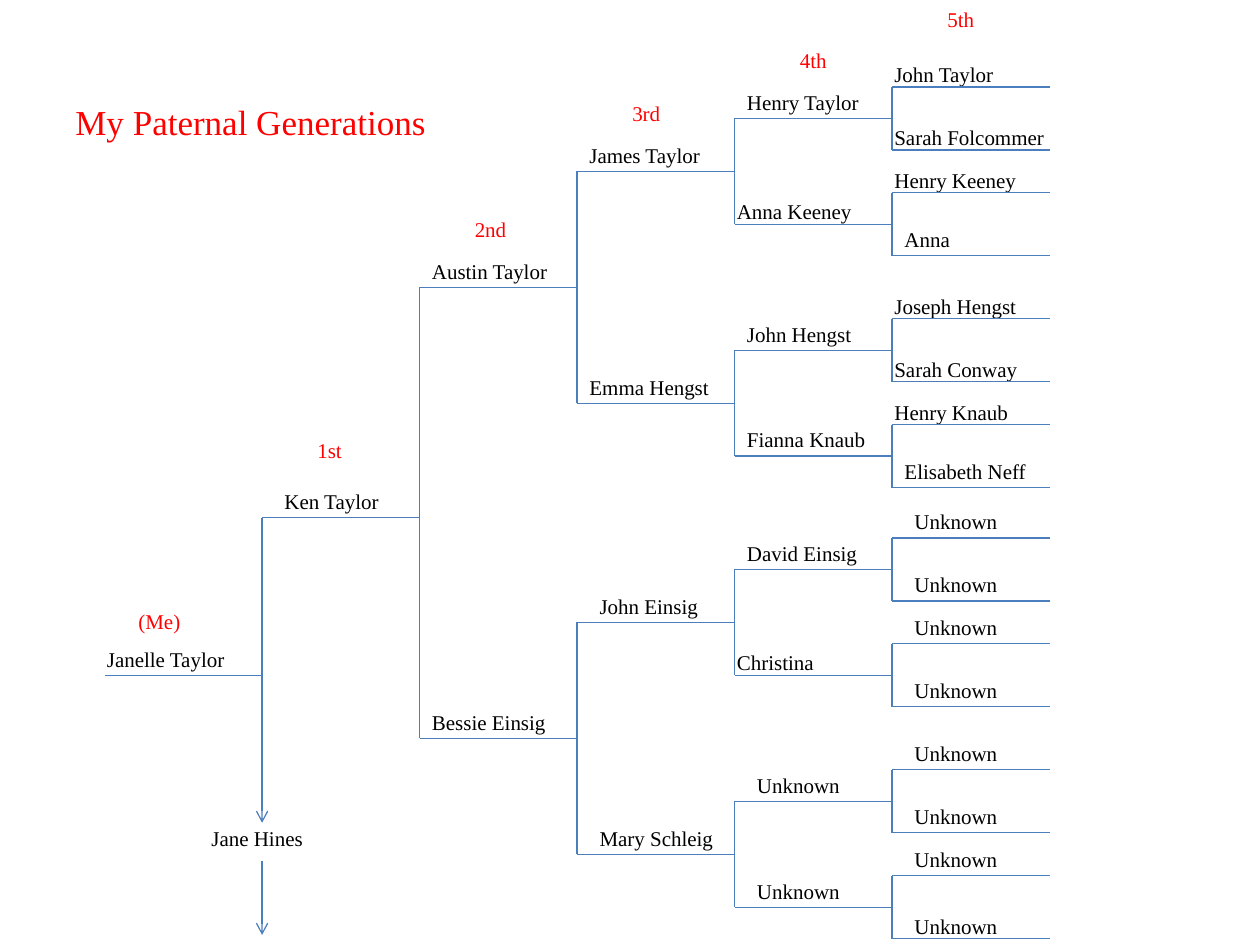
from pptx import Presentation
from pptx.dml.color import RGBColor
from pptx.enum.shapes import MSO_CONNECTOR
from pptx.enum.text import MSO_AUTO_SIZE
from pptx.oxml.ns import qn
from pptx.util import Inches, Pt
from lxml import etree

STRAIGHT = MSO_CONNECTOR.STRAIGHT
FIT = MSO_AUTO_SIZE.SHAPE_TO_FIT_TEXT
BLACK = RGBColor(0x00, 0x00, 0x00)
RED = RGBColor(0xFF, 0x00, 0x00)
BLUE = RGBColor(0x4B, 0x7E, 0xBC)
FONT = "Times New Roman"

LEFT, STEP = 0.83, 1.25  # first column and column width
RISE = 0.28              # from the top of a name down to its line

# Each person: name, text width, text offset from the column, rise
UNKNOWN = ("Unknown", 0.86, 0.08, RISE)
ME = [("Janelle Taylor", 1.15, -0.08, RISE)]
FATHER = [("Ken Taylor", 0.96, 0.08, RISE)]
SECOND = [("Austin Taylor", 1.13, 0, RISE), ("Bessie Einsig", 1.12, 0, RISE)]
THIRD = [
    ("James Taylor", 1.09, 0, RISE), ("Emma Hengst", 1.16, 0, RISE),
    ("John Einsig", 0.99, 0.08, RISE), ("Mary Schleig", 1.12, 0.08, RISE),
]
FOURTH = [
    ("Henry Taylor", 1.1, 0, RISE), ("Anna Keeney", 1.17, -0.08, 0.25),
    ("John Hengst", 1.04, 0, RISE), ("Fianna Knaub", 1.19, 0, RISE),
    ("David Einsig", 1.09, 0, RISE), ("Christina", 0.82, -0.08, 0.25),
    UNKNOWN, UNKNOWN,
]
FIFTH = [
    ("John Taylor", 1.0, -0.08, 0.25), ("Sarah Folcommer", 1.4, -0.08, 0.25),
    ("Henry Keeney", 1.18, -0.08, 0.25), ("Anna", 0.57, 0, RISE),
    ("Joseph Hengst", 1.18, -0.08, 0.25), ("Sarah Conway", 1.23, -0.08, 0.25),
    ("Henry Knaub", 1.11, -0.08, 0.25), ("Elisabeth Neff", 1.18, 0, RISE),
    *[UNKNOWN] * 7, ("Unknown", 0.86, 0.08, 0.25),
]
# Older generations, each with its distance above and below the child's line
ELDERS = [(THIRD, 0.92), (FOURTH, 0.42), (FIFTH, 0.25)]

LABELS = [
    ("(Me)", 1, 4.78, 0.54), ("1st", 2.42, 3.42, 0.41),
    ("2nd", 3.67, 1.67, 0.46), ("3rd", 4.92, 0.75, 0.43),
    ("4th", 6.25, 0.33, 0.42), ("5th", 7.42, 0, 0.42),
]


def add_text(slide, text, x, y, width, color=BLACK, size=12, height=0.3):
    box = slide.shapes.add_textbox(
        Inches(x), Inches(y), Inches(width), Inches(height))
    frame = box.text_frame
    frame.text = text
    frame.word_wrap = False
    frame.auto_size = FIT
    font = frame.paragraphs[0].runs[0].font
    font.name, font.size, font.color.rgb = FONT, Pt(size), color


def add_line(slide, x1, y1, x2, y2, arrow=False):
    line = slide.shapes.add_connector(
        STRAIGHT, Inches(x1), Inches(y1), Inches(x2), Inches(y2))
    line.line.color.rgb = BLUE
    line.line.width = Pt(0.75)
    props = line._element.spPr
    if arrow:
        tail = etree.SubElement(props.find(qn("a:ln")), qn("a:tailEnd"))
        tail.set("type", "arrow")
    etree.SubElement(props, qn("a:effectLst"))


def add_column(slide, x, people, levels):
    """Draw one generation: names on lines, each couple joined at the left."""
    for (name, width, shift, rise), y in zip(people, levels):
        add_text(slide, name, x + shift, y - rise, width)
        add_line(slide, x, y, x + STEP, y)
    for top, bottom in zip(levels[::2], levels[1::2]):
        add_line(slide, x, top, x, bottom)


def add_tree(slide, x):
    columns = [(ME, [5.36]), (FATHER, [4.11]), (SECOND, [2.28, 5.86])]
    for people, gap in ELDERS:
        levels = [y + d for y in columns[-1][1] for d in (-gap, gap)]
        columns.append((people, levels))
    for i, (people, levels) in enumerate(columns):
        add_column(slide, x + i * STEP, people, levels)


def add_descent(slide, x):
    """Draw the arrows from the father down past the mother."""
    add_line(slide, x, 4.11, x, 6.53, arrow=True)
    add_text(slide, "Jane Hines", x - 0.5, 6.5, 0.94)
    add_line(slide, x, 6.83, x, 7.42, arrow=True)


def add_labels(slide):
    add_text(slide, "My Paternal Generations", 0.5, 0.75, 3, RED, 20, 0.44)
    for text, x, y, width in LABELS:
        add_text(slide, text, x, y, width, RED)


def main():
    deck = Presentation()
    deck.slide_width, deck.slide_height = Inches(10), Inches(7.5)
    slide = deck.slides.add_slide(deck.slide_layouts[6])
    add_labels(slide)
    add_tree(slide, LEFT)
    add_descent(slide, LEFT + STEP)
    deck.save("out.pptx")


if __name__ == "__main__":
    main()
